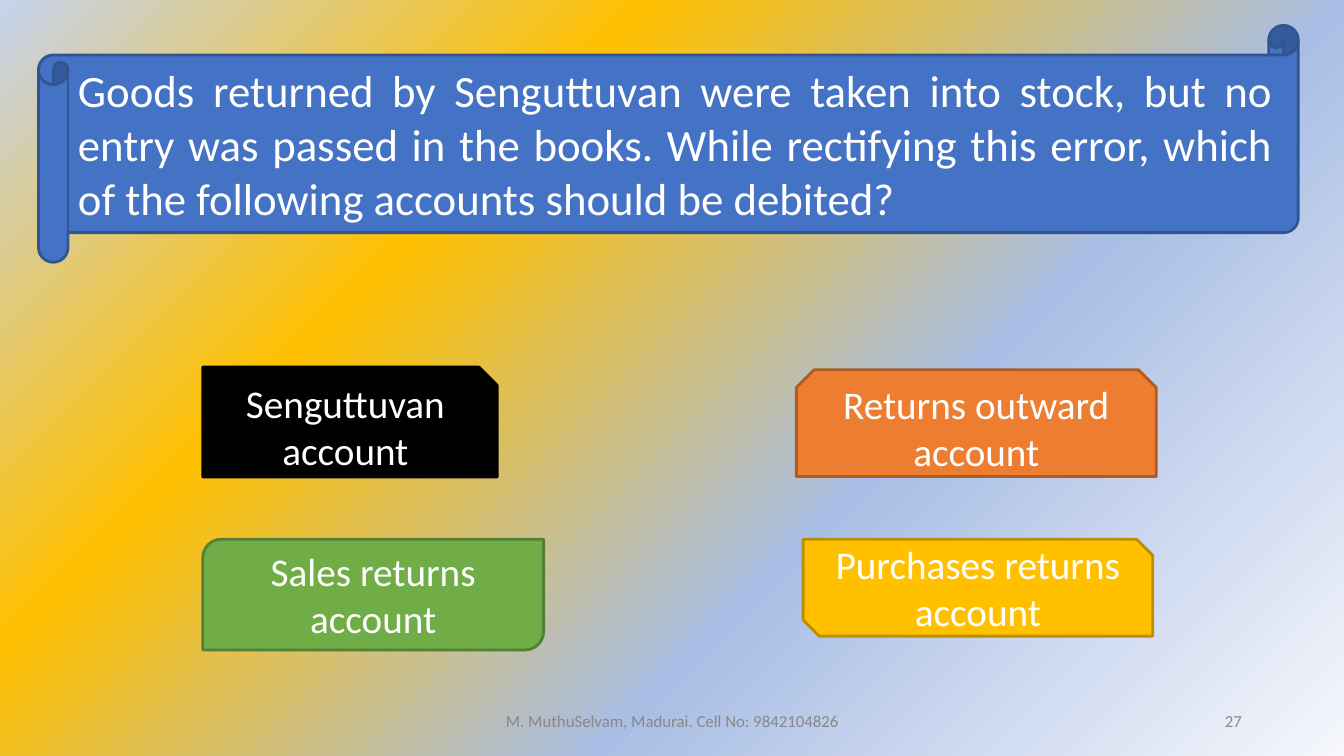
"""Build a quiz slide with a scroll question, four answer options and a footer."""
from dataclasses import dataclass

from lxml.etree import SubElement
from pptx import Presentation
from pptx.dml.color import RGBColor
from pptx.enum.shapes import MSO_SHAPE
from pptx.enum.text import MSO_ANCHOR, PP_ALIGN
from pptx.oxml.ns import qn
from pptx.util import Cm, Pt


@dataclass(frozen=True)
class Theme:
    font: str = "Calibri"
    question_size: int = 32
    answer_size: int = 28
    footer_size: int = 12
    outline: int = 2
    white: str = "FFFFFF"
    grey: str = "888888"
    blue: tuple = ("4472C4", "325491")
    black: tuple = ("000000", "000000")
    orange: tuple = ("ED7D31", "AF5C24")
    gold: tuple = ("FFC000", "BD8E00")
    green: tuple = ("70AD47", "538035")
    background: tuple = ((0, "F5F7FC"), (36, "A9BEE4"), (69, "FFC000"), (100, "C5D3ED"))


theme = Theme()


def write_text(shape, text, size, color, alignment):
    frame = shape.text_frame
    frame.word_wrap = True
    frame.vertical_anchor = MSO_ANCHOR.MIDDLE
    paragraph = frame.paragraphs[0]
    paragraph.text = text
    paragraph.alignment = alignment
    paragraph.font.name = theme.font
    paragraph.font.size = Pt(size)
    paragraph.font.color.rgb = RGBColor.from_string(color)


def add_panel(slide, preset, box, colors, text, size, alignment):
    shape = slide.shapes.add_shape(preset, *map(Cm, box))
    shape.shadow.inherit = False
    fill_color, line_color = colors
    shape.fill.solid()
    shape.fill.fore_color.rgb = RGBColor.from_string(fill_color)
    shape.line.color.rgb = RGBColor.from_string(line_color)
    shape.line.width = Pt(theme.outline)
    write_text(shape, text, size, theme.white, alignment)


presentation = Presentation()
presentation.slide_width = Cm(33.87)
presentation.slide_height = Cm(19.05)
slide = presentation.slides.add_slide(presentation.slide_layouts[6])

slide.background.fill.gradient()
gradient = slide.element.find(".//" + qn("a:gradFill"))
for child in list(gradient):
    gradient.remove(child)
stops = SubElement(gradient, qn("a:gsLst"))
for position, color in theme.background:
    stop = SubElement(stops, qn("a:gs"), pos=str(position * 1000))
    SubElement(stop, qn("a:srgbClr"), val=color)
gradient_path = SubElement(gradient, qn("a:path"), path="circle")
SubElement(gradient_path, qn("a:fillToRect"), l="100000", t="100000")

add_panel(
    slide, MSO_SHAPE.HORIZONTAL_SCROLL, (0.97, 0.64, 31.75, 5.97), theme.blue,
    "Goods returned by Senguttuvan were taken into stock, but no entry was passed in "
    "the books. While rectifying this error, which of the following accounts should "
    "be debited?",
    theme.question_size, PP_ALIGN.JUSTIFY,
)

answers = [
    (MSO_SHAPE.SNIP_1_RECTANGLE, (5.11, 9.25, 7.42, 2.77), theme.black, "Senguttuvan account"),
    (MSO_SHAPE.SNIP_2_SAME_RECTANGLE, (20.07, 9.32, 9.07, 2.69), theme.orange, "Returns outward account"),
    (MSO_SHAPE.SNIP_2_DIAG_RECTANGLE, (20.24, 13.59, 8.81, 2.44), theme.gold, "Purchases returns account"),
    (MSO_SHAPE.ROUND_2_DIAG_RECTANGLE, (5.11, 13.59, 8.59, 2.79), theme.green, "Sales returns account"),
]
for preset, box, colors, text in answers:
    add_panel(slide, preset, box, colors, text, theme.answer_size, PP_ALIGN.CENTER)

footers = [
    (11.23, 11.43, "M. MuthuSelvam, Madurai. Cell No: 9842104826", PP_ALIGN.CENTER),
    (23.93, 7.62, "27", PP_ALIGN.RIGHT),
]
for left, width, text, alignment in footers:
    footer = slide.shapes.add_textbox(Cm(left), Cm(17.65), Cm(width), Cm(1.02))
    write_text(footer, text, theme.footer_size, theme.grey, alignment)

presentation.save("out.pptx")
